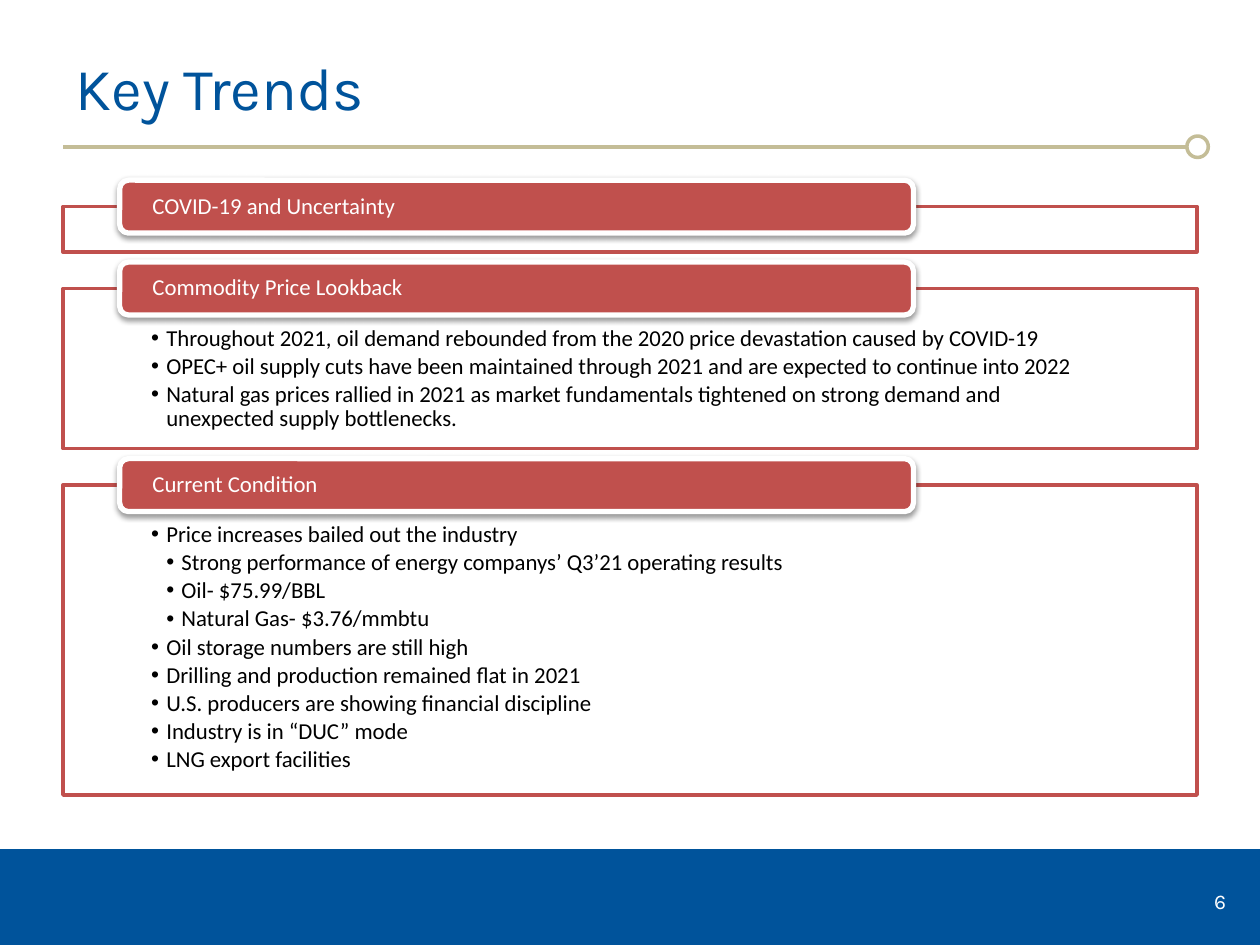
from lxml import etree
from pptx import Presentation
from pptx.dml.color import RGBColor
from pptx.enum.shapes import MSO_CONNECTOR, MSO_SHAPE
from pptx.enum.text import MSO_ANCHOR, MSO_AUTO_SIZE, PP_ALIGN
from pptx.oxml.ns import qn
from pptx.util import Inches, Pt

RECTANGLE, ROUNDED, OVAL = MSO_SHAPE.RECTANGLE, MSO_SHAPE.ROUNDED_RECTANGLE, MSO_SHAPE.OVAL
STRAIGHT = MSO_CONNECTOR.STRAIGHT
TOP, MIDDLE = MSO_ANCHOR.TOP, MSO_ANCHOR.MIDDLE
LEFT, RIGHT = PP_ALIGN.LEFT, PP_ALIGN.RIGHT
NO_AUTOFIT = MSO_AUTO_SIZE.NONE

BLUE = RGBColor(0x00, 0x53, 0x9B)
TAN = RGBColor(0xC4, 0xBD, 0x97)
RED = RGBColor(0xC0, 0x50, 0x4D)
WHITE = RGBColor(0xFF, 0xFF, 0xFF)
BLACK = RGBColor(0x00, 0x00, 0x00)

TWO_CONTENT_LAYOUT = 3
PANEL_GAP = 0.29
TAB_RISE = 0.21
BULLET_STEP = 0.12

# Each topic: heading, panel height, list of (level, text)
TOPICS = [
    ("COVID-19 and Uncertainty", 0.36, []),
    ("Commodity Price Lookback", 1.27, [
        (0, "Throughout 2021, oil demand rebounded from the 2020 price devastation caused by COVID-19"),
        (0, "OPEC+ oil supply cuts have been maintained through 2021 and are expected to continue into 2022"),
        (0, "Natural gas prices rallied in 2021 as market fundamentals tightened on strong demand "
            "and unexpected supply bottlenecks."),
    ]),
    ("Current Condition", 2.46, [
        (0, "Price increases bailed out the industry"),
        (1, "Strong performance of energy companys’ Q3’21 operating results"),
        (1, "Oil- $75.99/BBL"),
        (1, "Natural Gas- $3.76/mmbtu"),
        (0, "Oil storage numbers are still high"),
        (0, "Drilling and production remained flat in 2021"),
        (0, "U.S. producers are showing financial discipline"),
        (0, "Industry is in “DUC” mode"),
        (0, "LNG export facilities"),
    ]),
]


class TrendSlide:
    """Holds the text styles and the slide being built."""

    heading = {"name": "Karla", "size": Pt(34)}
    number = {"name": "Karla", "size": Pt(12)}
    body = {"name": "Calibri", "size": Pt(13)}

    def __init__(self, slide):
        self.slide = slide

    def set_values(self, target, values):
        for key, value in values.items():
            setattr(target, key, value)

    def paint(self, shape, fill, line, width):
        shape.fill.solid()
        shape.fill.fore_color.rgb = fill
        shape.line.color.rgb = line
        shape.line.width = Pt(width)

    def place(self, shape, left, top, width, height):
        box = {"left": left, "top": top, "width": width, "height": height}
        self.set_values(shape, {side: Inches(length) for side, length in box.items()})

    def frame(self, shape, anchor, margins):
        left, top, right, bottom = map(Inches, margins)
        self.set_values(shape.text_frame, {
            "word_wrap": True, "auto_size": NO_AUTOFIT, "vertical_anchor": anchor,
            "margin_left": left, "margin_top": top,
            "margin_right": right, "margin_bottom": bottom})

    def set_text(self, paragraph, text, style, color, **layout):
        paragraph.text = text
        self.set_values(paragraph, layout)
        self.set_values(paragraph.font, style)
        paragraph.font.color.rgb = color

    def shape(self, kind, box, fill, line, width):
        shape = self.slide.shapes.add_shape(kind, *map(Inches, box))
        shape.shadow.inherit = False
        self.paint(shape, fill, line, width)
        return shape

    def rule(self, left, right, y, color, width):
        rule = self.slide.shapes.add_connector(
            STRAIGHT, Inches(left), Inches(y), Inches(right), Inches(y))
        rule.line.color.rgb = color
        rule.line.width = Pt(width)
        etree.SubElement(rule._element.spPr, qn("a:effectLst"))

    def title(self, text):
        title = self.slide.shapes.title
        self.place(title, 0.5, 0.3, 9, 0.78)
        self.frame(title, MIDDLE, (0.1, 0.05, 0.1, 0.05))
        self.set_text(title.text_frame.paragraphs[0], text, self.heading, BLUE, alignment=LEFT)

    def page_number(self, text):
        page = self.slide.shapes.add_textbox(*map(Inches, (7.5, 6.95, 2.33, 0.4)))
        self.frame(page, MIDDLE, (0.1, 0.05, 0.1, 0.05))
        self.set_text(page.text_frame.paragraphs[0], text, self.number, WHITE,
                      alignment=RIGHT, space_after=Pt(6))

    def bullet_panel(self, panel, box, items):
        self.place(panel, *box)
        self.paint(panel, WHITE, RED, 2)
        self.frame(panel, TOP, (0.7, 0.3, 0.7, 0.1))
        text_frame = panel.text_frame
        for index, (level, text) in enumerate(items):
            paragraph = text_frame.add_paragraph() if index else text_frame.paragraphs[0]
            properties = paragraph._p.get_or_add_pPr()
            properties.set("marL", str(Inches(BULLET_STEP * (level + 1))))
            properties.set("indent", str(-Inches(BULLET_STEP)))
            etree.SubElement(properties, qn("a:buChar"), char="•")
            self.set_text(paragraph, text, self.body, BLACK, level=level, alignment=LEFT,
                          line_spacing=0.9, space_before=Pt(0), space_after=Pt(2))

    def tab(self, text, top):
        tab = self.shape(ROUNDED, (0.95, top, 6.3, 0.42), RED, WHITE, 3)
        effects = tab._element.spPr.find(qn("a:effectLst"))
        shadow = etree.SubElement(effects, qn("a:outerShdw"), blurRad=str(Pt(3.1)),
                                  dist=str(Pt(1.6)), dir="5400000", rotWithShape="0")
        color = etree.SubElement(shadow, qn("a:srgbClr"), val=str(BLACK))
        etree.SubElement(color, qn("a:alpha"), val="38000")
        self.frame(tab, MIDDLE, (0.24, 0, 0.24, 0))
        self.set_text(tab.text_frame.paragraphs[0], text, self.body, WHITE,
                      alignment=LEFT, line_spacing=0.9)


def main():
    deck = Presentation()
    deck.slide_width, deck.slide_height = Inches(10), Inches(7.5)
    slide = deck.slides.add_slide(deck.slide_layouts[TWO_CONTENT_LAYOUT])
    trends = TrendSlide(slide)

    # Footer band, title and its rule
    trends.shape(RECTANGLE, (0, 6.75, 10, 0.75), BLUE, BLUE, 2)
    trends.rule(0.5, 9.5, 1.17, TAN, 2.25)
    trends.shape(OVAL, (9.42, 1.08, 0.17, 0.17), WHITE, TAN, 2)
    trends.title("Key Trends")
    trends.page_number("6")

    # Stacked topics: a panel with a tab over its top edge
    list_panels = iter([slide.placeholders[1], slide.placeholders[2]])
    top = 1.64
    for heading, height, items in TOPICS:
        box = (0.5, top, 9, height)
        if items:
            trends.bullet_panel(next(list_panels), box, items)
        else:
            trends.shape(RECTANGLE, box, WHITE, RED, 2)
        trends.tab(heading, top - TAB_RISE)
        top += height + PANEL_GAP

    deck.save("out.pptx")


if __name__ == "__main__":
    main()
